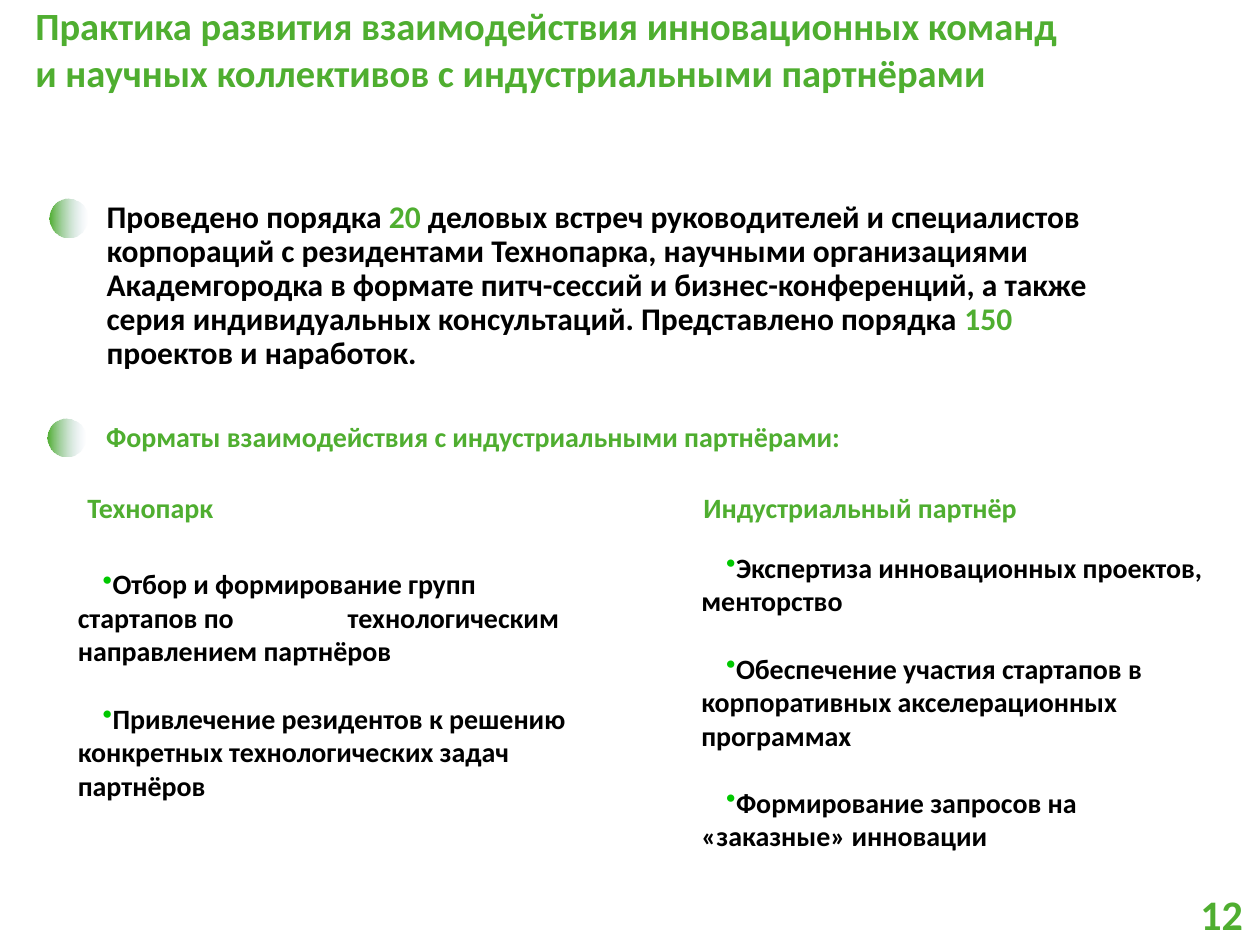
from dataclasses import dataclass

from lxml import etree
from pptx import Presentation
from pptx import util as u
from pptx.dml.color import RGBColor
from pptx.enum import shapes, text
from pptx.oxml import ns


@dataclass(frozen=True)
class Theme:
    font: str = "Calibri"
    green: str = "4FAE30"
    black: str = "000000"
    bullet: str = "00C800"
    fade: str = "C2D1ED"
    title_pt: float = 22
    lead_pt: float = 18
    body_pt: float = 16
    number_pt: float = 24
    list_gap_pt: float = 19.2
    tight: float = 0.9


def sub(parent, tag, **attrs):
    return etree.SubElement(parent, ns.qn(tag), attrs)


class Deck:
    def __init__(self, theme):
        self.theme = theme
        self.prs = Presentation()
        self.prs.slide_width, self.prs.slide_height = u.Cm(25.4), u.Cm(19.05)
        self.s = None

    def new_slide(self):
        self.s = self.prs.slides.add_slide(self.prs.slide_layouts[5])

    def add_run(self, p, words, size, color):
        r = p.add_run()
        r.text = words
        r.font.name, r.font.size, r.font.bold = self.theme.font, u.Pt(size), True
        r.font.color.rgb = RGBColor.from_string(color)

    def title(self, x, y, w, h, lines):
        sp = self.s.shapes.title
        sp.left, sp.top, sp.width, sp.height = map(u.Cm, (x, y, w, h))
        tf = sp.text_frame
        tf.word_wrap = False
        tf.auto_size = text.MSO_AUTO_SIZE.NONE
        tf.vertical_anchor = text.MSO_ANCHOR.TOP
        for i, line in enumerate(lines):
            p = tf.add_paragraph() if i else tf.paragraphs[0]
            p.alignment = text.PP_ALIGN.LEFT
            self.add_run(p, line, self.theme.title_pt, self.theme.green)

    def textbox(self, x, y, w, h, wrap=True):
        tf = self.s.shapes.add_textbox(*map(u.Cm, (x, y, w, h))).text_frame
        tf.word_wrap = wrap
        return tf

    def heading(self, x, y, w, h, words):
        tf = self.textbox(x, y, w, h)
        tf.vertical_anchor = text.MSO_ANCHOR.MIDDLE
        tf.margin_left = u.Cm(1.68)
        tf.margin_top = tf.margin_right = tf.margin_bottom = u.Cm(0.15)
        p = tf.paragraphs[0]
        p.line_spacing = self.theme.tight
        self.add_run(p, words, self.theme.body_pt, self.theme.green)

    def lead(self, x, y, w, h, parts):
        """Write one paragraph; every second part is highlighted."""
        p = self.textbox(x, y, w, h).paragraphs[0]
        p.line_spacing = self.theme.tight
        for i, words in enumerate(parts):
            color = self.theme.green if i % 2 else self.theme.black
            self.add_run(p, words, self.theme.lead_pt, color)

    def bullets(self, x, y, w, h, items, tab=5.44):
        tf = self.textbox(x, y, w, h)
        for i, item in enumerate(items):
            p = tf.add_paragraph() if i else tf.paragraphs[0]
            pPr = p._p.get_or_add_pPr()
            pPr.set("marL", "0")
            pPr.set("indent", str(u.Cm(0.5)))
            sub(sub(pPr, "a:buClr"), "a:srgbClr", val=self.theme.bullet)
            sub(pPr, "a:buChar", char="•")
            if "\t" in item:
                sub(sub(pPr, "a:tabLst"), "a:tab", pos=str(u.Cm(tab)), algn="l")
            if i:
                p.space_before = u.Pt(self.theme.list_gap_pt)
            self.add_run(p, item, self.theme.body_pt, self.theme.black)

    def marker(self, x, y, d=0.77):
        """Draw a round marker that fades out to the right."""
        sp = self.s.shapes.add_shape(shapes.MSO_SHAPE.OVAL, *map(u.Cm, (x, y, d, d)))
        sp.shadow.inherit = False
        sp.line.fill.background()
        sp.fill.gradient()
        sp.fill.gradient_angle = 0
        for stop, color in zip(sp.fill.gradient_stops, (self.theme.green, self.theme.fade)):
            stop.color.rgb = RGBColor.from_string(color)
        last = sp._element.spPr.findall(".//" + ns.qn("a:srgbClr"))[-1]
        sub(last, "a:alpha", val="0")

    def number(self, x, y, w, h, words):
        p = self.textbox(x, y, w, h, wrap=False).paragraphs[0]
        self.add_run(p, words, self.theme.number_pt, self.theme.green)


def main():
    deck = Deck(Theme())
    deck.new_slide()
    deck.title(0.46, -0.08, 21.54, 2.13, [
        "Практика развития взаимодействия инновационных команд",
        "и научных коллективов с индустриальными партнёрами",
    ])
    deck.marker(0.99, 4.01)
    deck.lead(1.9, 3.94, 21.21, 3.71, [
        "Проведено порядка ", "20",
        " деловых встреч руководителей и специалистов корпораций с резидентами"
        " Технопарка, научными организациями Академгородка в формате питч-сессий"
        " и бизнес-конференций, а также серия индивидуальных консультаций."
        " Представлено порядка ", "150", " проектов и наработок.",
    ])
    deck.marker(0.96, 8.43)
    deck.heading(0.46, 8.13, 18.44, 1.4,
                 "Форматы взаимодействия с индустриальными партнёрами:")
    deck.heading(0.08, 9.58, 9.27, 1.4, "Технопарк")
    deck.bullets(1.32, 11.3, 10.72, 5.05, [
        "Отбор и формирование групп стартапов по\tтехнологическим направлением партнёров",
        "Привлечение резидентов к решению конкретных технологических задач партнёров",
    ])
    deck.heading(12.5, 9.58, 11, 1.4, "Индустриальный партнёр")
    deck.bullets(13.89, 10.97, 10.8, 6.4, [
        "Экспертиза инновационных проектов, менторство",
        "Обеспечение участия стартапов в корпоративных акселерационных программах",
        "Формирование запросов на «заказные» инновации",
    ])
    deck.number(23.95, 17.78, 1.37, 1.27, "12")
    deck.prs.save("out.pptx")


if __name__ == "__main__":
    main()
